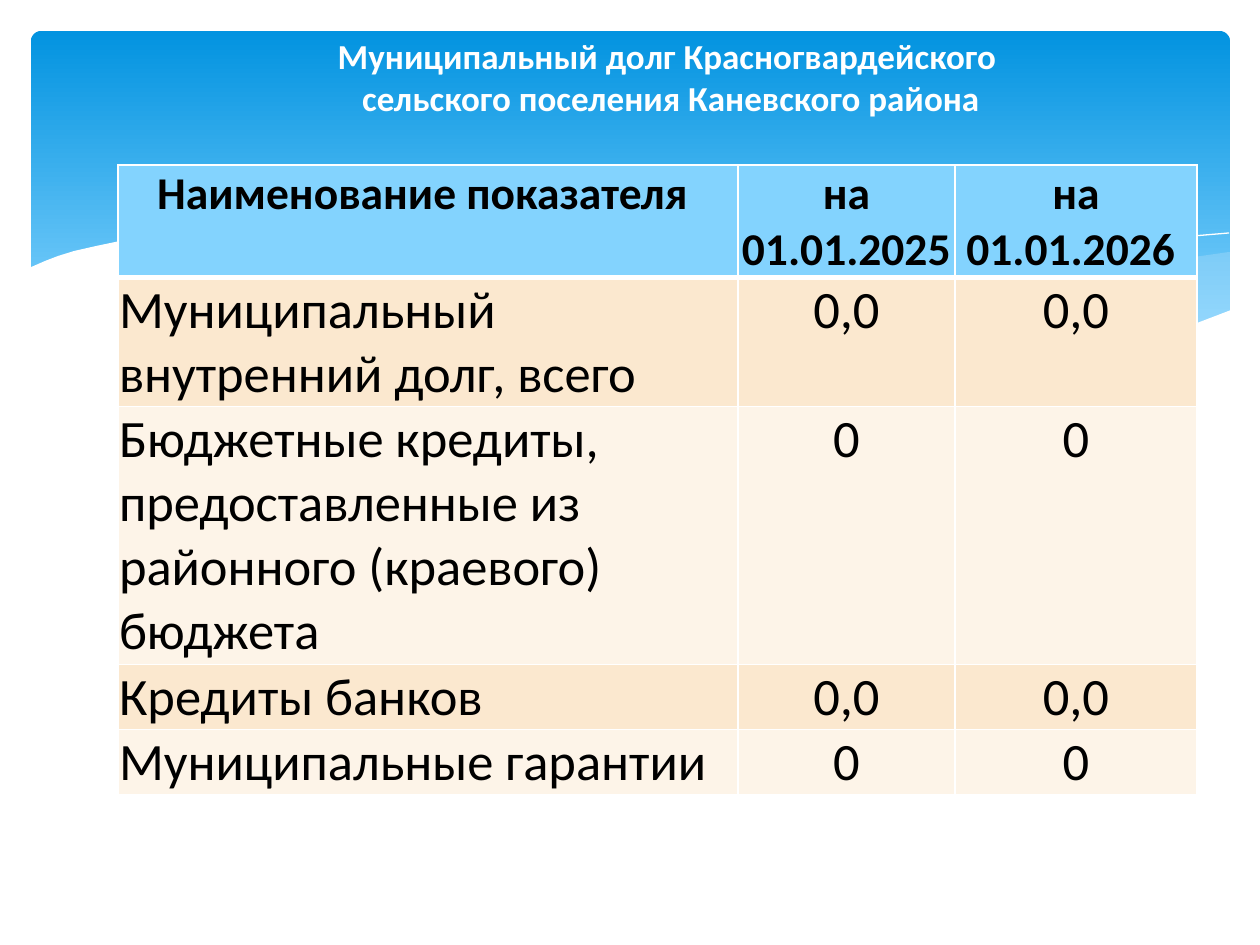
import pptx
import pptx.util
import pptx.dml.color
import pptx.enum.shapes
import pptx.enum.text
from lxml import etree

PX = 914400 / 126  # EMU in one px
A = "{http://schemas.openxmlformats.org/drawingml/2006/main}"
THEME = {
    "font": "Calibri", "title_size": 20, "header_size": 26, "body_size": 30,
    "white": "FFFFFF", "text": "000000", "sky_top": "0293E0",
    "sky": "83D3FE", "mist": "C6E7FC", "bands": ["FBE8CF", "FDF4E8"],
}
RGB = pptx.dml.color.RGBColor.from_string
CENTER = pptx.enum.text.PP_ALIGN.CENTER


def px(length):
    return pptx.util.Emu(round(length * PX))


def style_text(paragraph, size, color, bold):
    for run in paragraph.runs:
        run.font.name = THEME["font"]
        run.font.size = pptx.util.Pt(size)
        run.font.color.rgb = RGB(THEME[color])
        run.font.bold = bold


deck = pptx.Presentation()
deck.slide_width, deck.slide_height = px(1260), px(945)
slide = deck.slides.add_slide(deck.slide_layouts[5])

# Blue gradient banner
banner = slide.shapes.add_shape(
    pptx.enum.shapes.MSO_SHAPE.ROUNDED_RECTANGLE, px(31), px(31), px(1199), px(340))
banner.adjustments[0] = 0.03
banner.shadow.inherit = False
banner.line.fill.background()
banner.fill.gradient()
banner.fill.gradient_angle = 270
for stop, position, color in zip(banner.fill.gradient_stops, (0, 0.9), ("sky_top", "sky")):
    stop.position = position
    stop.color.rgb = RGB(THEME[color])

# Waves: fill colour, opacity in percent, outline points; no fill means an open line
waves = [
    ("mist", 29, [
        (1229, 252), (1194, 257), (1142, 268), (1085, 281), (1014, 299), (949, 312),
        (890, 324), (833, 334), (888, 341), (939, 346), (998, 349), (1052, 349),
        (1099, 345), (1140, 339), (1178, 330), (1213, 318), (1230, 311), (1230, 252)]),
    ("mist", 40, [
        (1125, 344), (1055, 334), (976, 320), (890, 302), (793, 280), (736, 266),
        (682, 256), (633, 247), (586, 241), (529, 236), (479, 233), (433, 234),
        (394, 237), (360, 241), (431, 251), (509, 266), (566, 280), (668, 302),
        (757, 321), (838, 335), (910, 345), (974, 349), (1031, 350), (1080, 349)]),
    (None, 100, [
        (389, 246), (433, 239), (505, 236), (591, 238), (672, 244), (766, 257),
        (876, 276), (958, 294), (1047, 316), (1143, 343)]),
    (None, 100, [
        (772, 324), (876, 296), (978, 272), (1053, 257), (1128, 244), (1182, 237),
        (1229, 233)]),
    ("white", 100, [
        (1231, 310), (1197, 323), (1159, 334), (1118, 341), (1071, 347), (1019, 349),
        (959, 347), (892, 340), (816, 330), (730, 315), (634, 294), (563, 277),
        (493, 261), (428, 248), (368, 239), (315, 234), (266, 232), (223, 232),
        (184, 233), (150, 236), (120, 241), (96, 246), (74, 251), (58, 256),
        (45, 261), (29, 268), (29, 415), (1231, 415)]),
]
for color, opacity, points in waves:
    outline = slide.shapes.build_freeform(*points[0], scale=PX)
    outline.add_line_segments(points[1:], close=color is not None)
    wave = outline.convert_to_shape()
    wave.shadow.inherit = False
    if color is None:
        wave.fill.background()
        wave.line.color.rgb = RGB(THEME["white"])
        wave.line.width = 0
        continue
    wave.line.fill.background()
    wave.fill.solid()
    wave.fill.fore_color.rgb = RGB(THEME[color])
    if opacity < 100:
        tint = wave._element.spPr.find(f"{A}solidFill/{A}srgbClr")
        etree.SubElement(tint, f"{A}alpha", val=str(opacity * 1000))

# Debt table
debt_rows = [
    ("Наименование показателя ", "на 01.01.2025 ", "на 01.01.2026 "),
    ("Муниципальный внутренний долг, всего", "0,0", "0,0"),
    ("Бюджетные кредиты, предоставленные из районного (краевого) бюджета", "0", "0"),
    ("Кредиты банков", "0,0", "0,0"),
    ("Муниципальные гарантии", "0", "0"),
]
column_widths = [620, 217, 242]
row_heights = [112, 129, 258, 65, 65]
debt = slide.shapes.add_table(
    len(debt_rows), len(column_widths), px(118), px(165),
    px(sum(column_widths)), px(sum(row_heights))).table
for column, width in zip(debt.columns, column_widths):
    column.width = px(width)
for r, (row, height) in enumerate(zip(debt_rows, row_heights)):
    debt.rows[r].height = px(height)
    header = r == 0
    for c, wording in enumerate(row):
        cell = debt.cell(r, c)
        cell.margin_left = cell.margin_right = cell.margin_top = px(1)
        cell.margin_bottom = 0
        cell.text_frame.text = wording
        paragraph = cell.text_frame.paragraphs[0]
        if header or c > 0:
            paragraph.alignment = CENTER
        style_text(paragraph, THEME["header_size" if header else "body_size"], "text", header)

        # White borders, thicker between the header and the body
        for side in ("lnL", "lnR", "lnT", "lnB"):
            thick = (r, side) in ((0, "lnB"), (1, "lnT"))
            border = etree.SubElement(
                cell._tc.get_or_add_tcPr(), A + side, w=str(pptx.util.Pt(3 if thick else 1)))
            paint = etree.SubElement(border, f"{A}solidFill")
            etree.SubElement(paint, f"{A}srgbClr", val=THEME["white"])
        cell.fill.solid()
        cell.fill.fore_color.rgb = RGB(THEME["sky"] if header else THEME["bands"][(r - 1) % 2])

# Title, brought in front of the banner
title = slide.shapes.title
slide.shapes._spTree.append(title._element)
title.left, title.top, title.width, title.height = px(137), px(26), px(1060), px(100)
title.text_frame.text = "Муниципальный долг Красногвардейского\v сельского поселения Каневского района"
title.text_frame.vertical_anchor = pptx.enum.text.MSO_ANCHOR.MIDDLE
title.text_frame.paragraphs[0].alignment = CENTER
style_text(title.text_frame.paragraphs[0], THEME["title_size"], "white", True)

deck.save("out.pptx")
